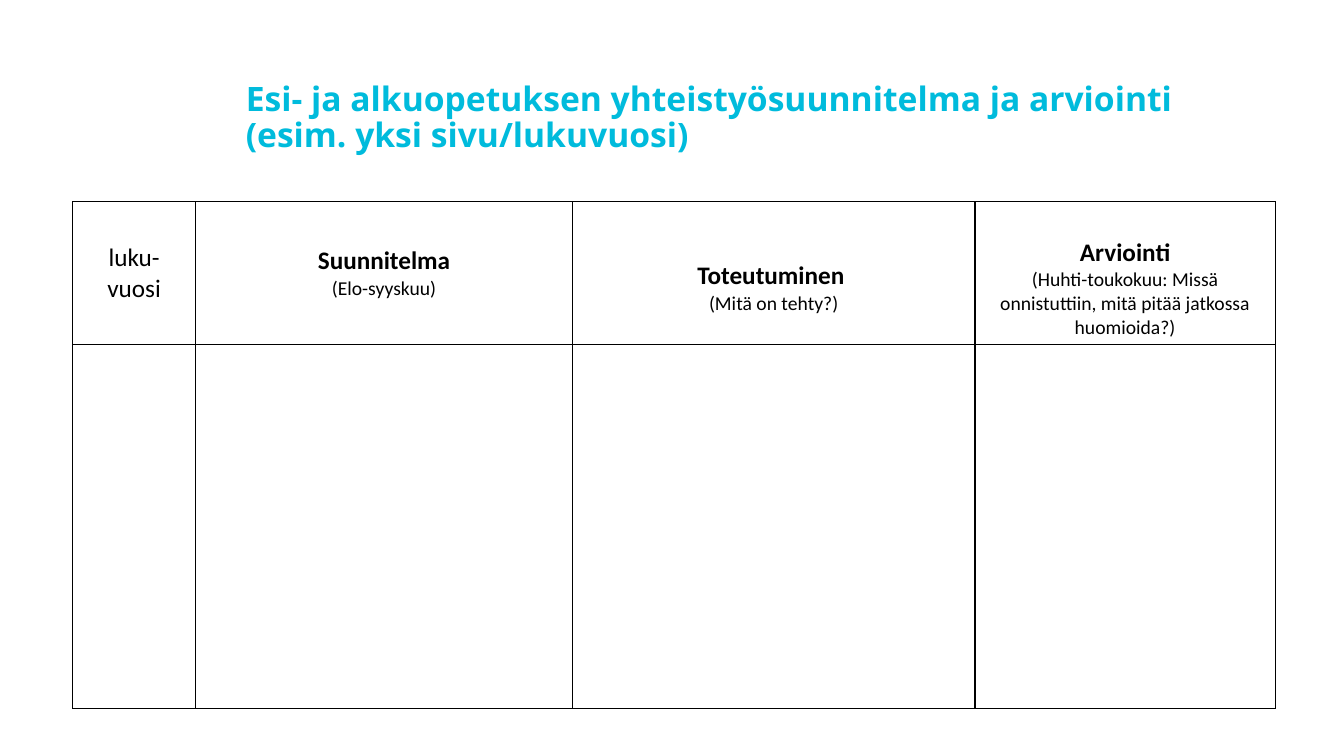
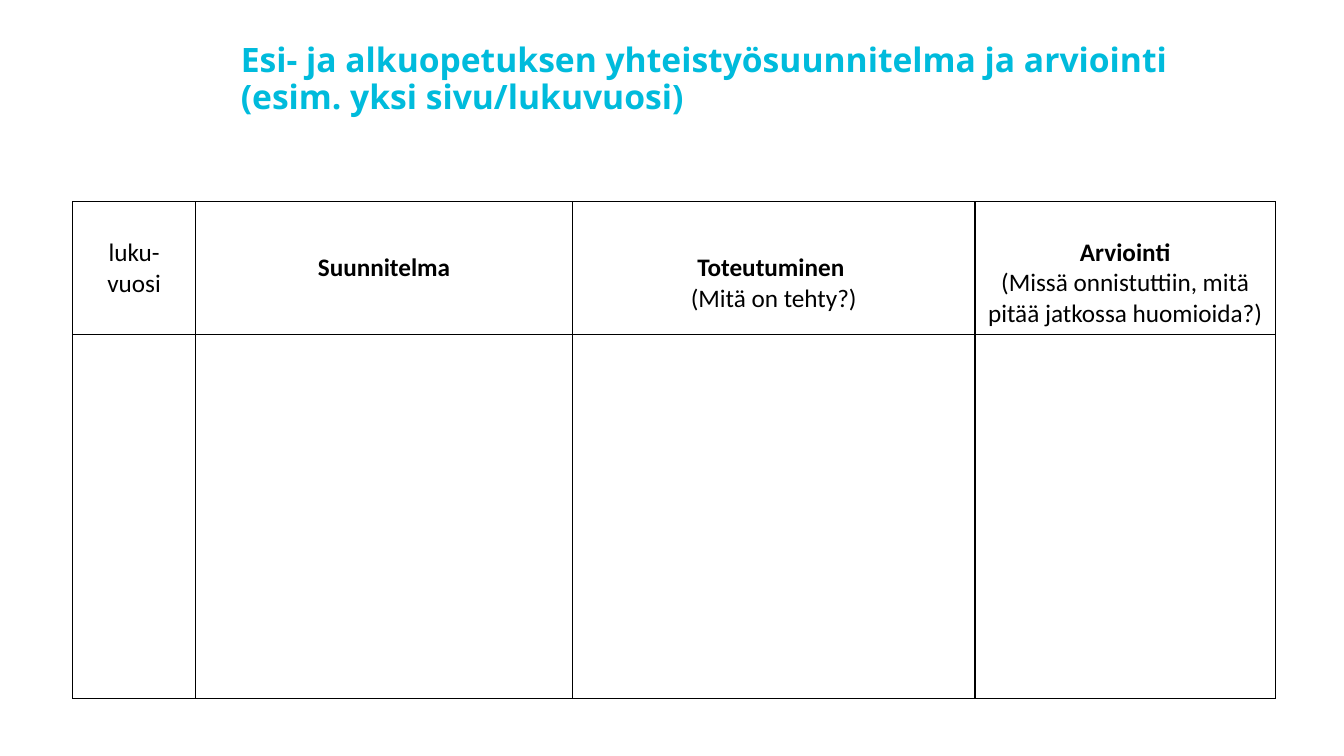
from lxml.etree import SubElement
from pptx import Presentation
from pptx.dml.color import RGBColor
from pptx.enum.text import MSO_ANCHOR as Anchor, PP_ALIGN as Align
from pptx.oxml.ns import qn
from pptx.util import Inches, Pt

COLORS = {"title": "00BBDC", "text": "000000", "border": "000000"}
TITLE_FORMAT = {"name": "Open Sans", "size": Pt(24), "bold": True}
HEADING = {"name": "Calibri", "size": Pt(18), "bold": True}
LABEL = {**HEADING, "bold": False}
SMALL = {**LABEL, "size": Pt(14)}

TITLE = "Esi- ja alkuopetuksen yhteistyösuunnitelma ja arviointi \v(esim. yksi sivu/lukuvuosi)"
TITLE_SIZE = (10.3, 1.01)
TABLE_LEFT, TABLE_TOP = 0.72, 2
COLUMNS = [1.22, 3.74, 3.99, 2.98]
BODY_HEIGHT = 3.61
SIDE_MARGINS = [0.15, 0.1, 0.1, 0.1]
TOP_MARGINS = [0.05, 0.05, 0.35, 0.35]  # the last two headings sit one line lower

# Each heading cell is a list of (text, format) paragraphs
PAGES = [
    {"title_at": (2.34, 0.67), "header_height": 1.42, "headings": [
        [("luku-vuosi", LABEL)],
        [("Suunnitelma", HEADING), ("(Elo-syyskuu)", SMALL)],
        [("Toteutuminen ", HEADING), ("(Mitä on tehty?)", SMALL)],
        [("Arviointi", HEADING),
         ("(Huhti-toukokuu: Missä onnistuttiin, mitä pitää jatkossa huomioida?)", SMALL)],
    ]},
    {"title_at": (2.29, 0.29), "header_height": 1.32, "headings": [
        [("luku-vuosi", LABEL)],
        [("Suunnitelma", HEADING)],
        [("Toteutuminen ", HEADING), ("(Mitä on tehty?)", LABEL)],
        [("Arviointi", HEADING),
         ("(Missä onnistuttiin, mitä pitää jatkossa huomioida?)", LABEL)],
    ]},
]


def write(para, text, font_format, color):
    para.text = text
    for span in para.runs:
        for name, value in font_format.items():
            setattr(span.font, name, value)
        span.font.color.rgb = RGBColor.from_string(COLORS[color])


def frame_cell(cell):
    cell.fill.background()
    properties = cell._tc.get_or_add_tcPr()
    for position, side in enumerate(("a:lnL", "a:lnR", "a:lnT", "a:lnB")):
        line = SubElement(properties, qn(side), w=str(Pt(1)))
        fill = SubElement(line, qn("a:solidFill"))
        SubElement(fill, qn("a:srgbClr"), val=COLORS["border"])
        properties.insert(position, line)


deck = Presentation()
deck.slide_width, deck.slide_height = Inches(13.33), Inches(7.5)

for content in PAGES:
    page = deck.slides.add_slide(deck.slide_layouts[6])

    # Title
    box = page.shapes.add_textbox(*map(Inches, content["title_at"] + TITLE_SIZE))
    frame = box.text_frame
    frame.word_wrap = True
    frame.vertical_anchor = Anchor.MIDDLE
    frame.paragraphs[0].line_spacing = 0.9
    write(frame.paragraphs[0], TITLE, TITLE_FORMAT, "title")

    # Table grid
    heights = [content["header_height"], BODY_HEIGHT]
    table = page.shapes.add_table(
        len(heights), len(COLUMNS), Inches(TABLE_LEFT), Inches(TABLE_TOP),
        Inches(sum(COLUMNS)), Inches(sum(heights))).table
    table.first_row = table.horz_banding = False
    for column, width in zip(table.columns, COLUMNS):
        column.width = Inches(width)
    for row, height in zip(table.rows, heights):
        row.height = Inches(height)
    for cell in table.iter_cells():
        frame_cell(cell)

    # Headings
    for index, paragraphs in enumerate(content["headings"]):
        cell = table.cell(0, index)
        cell.vertical_anchor = Anchor.MIDDLE
        cell.margin_left = cell.margin_right = Inches(SIDE_MARGINS[index])
        cell.margin_top = Inches(TOP_MARGINS[index])
        for number, (text, font_format) in enumerate(paragraphs):
            frame = cell.text_frame
            para = frame.add_paragraph() if number else frame.paragraphs[0]
            para.alignment = Align.CENTER
            write(para, text, font_format, "text")

deck.save("out.pptx")
